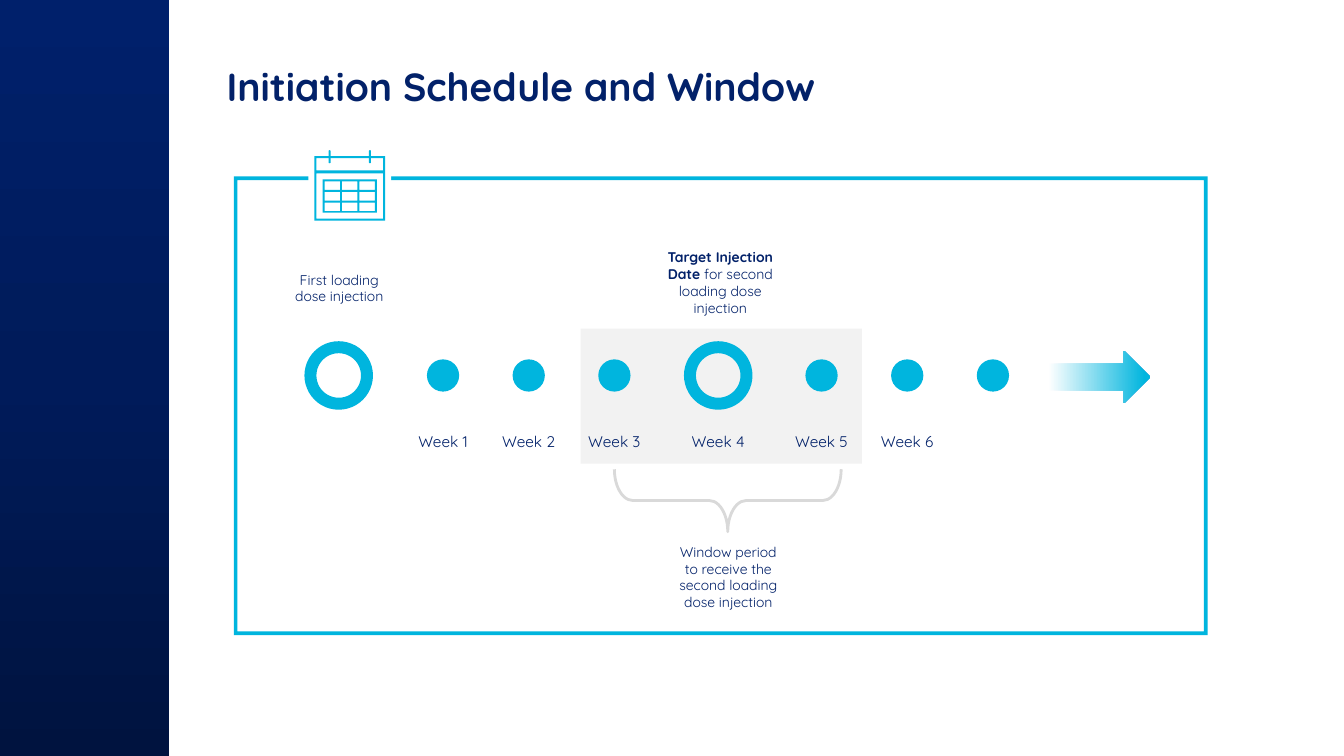
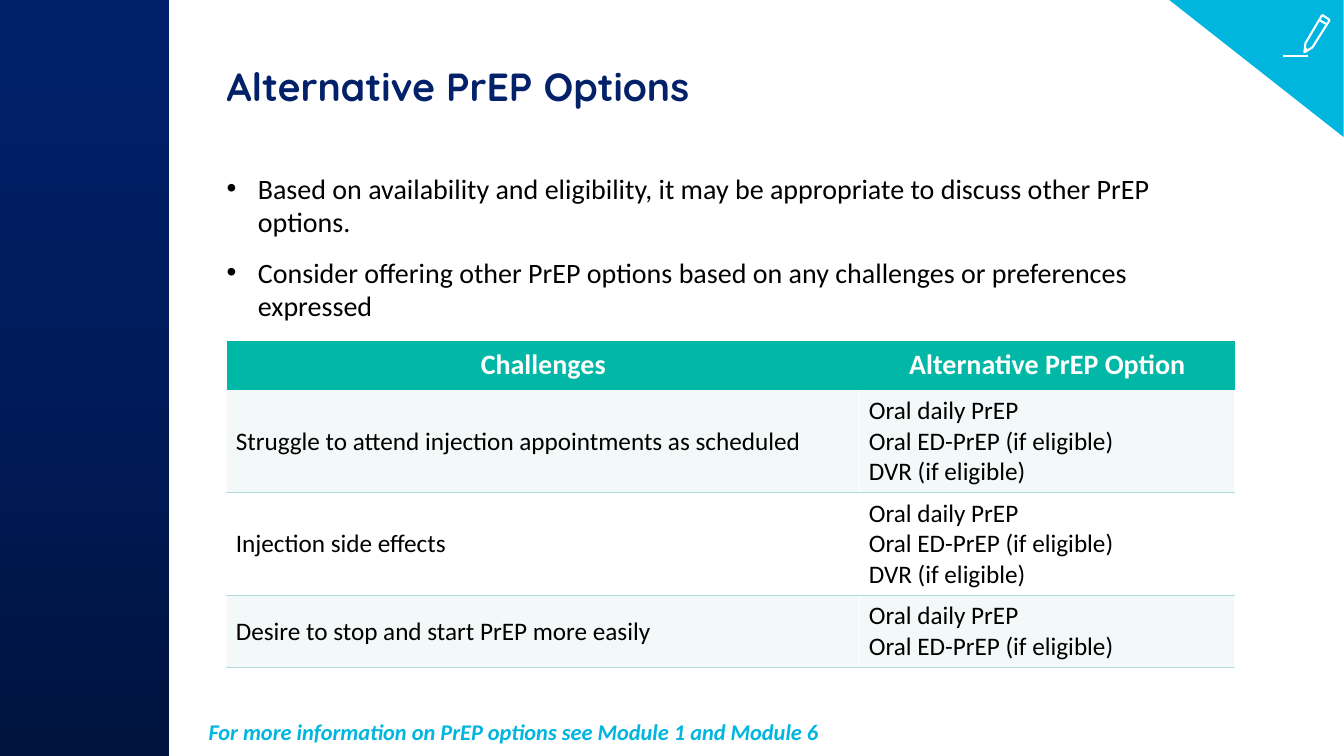
from copy import deepcopy
from itertools import product

from lxml.etree import SubElement
from pptx import Presentation
from pptx.dml.color import RGBColor
from pptx.enum.shapes import MSO_CONNECTOR as LINE, MSO_SHAPE as SHAPE
from pptx.enum.text import MSO_ANCHOR as ANCHOR, PP_ALIGN as ALIGN
from pptx.oxml.ns import qn
from pptx.util import Inches, Pt

CELL = Inches(0.1)
COLS, ROWS = 133.33, 75
COLORS = {
    "navy": "022169", "cyan": "00B5DE", "white": "FFFFFF", "black": "000000",
    "pale": "F2F2F2", "grey": "D9D9D9", "teal": "00B8A5", "mint": "F2F9F8",
    "rule": "B0DFDB", "band_dark": "00133F", "band_mid": "001B5A",
    "band_light": "00206B",
}
HEAD_FONT, BODY_FONT = "Quicksand", "Calibri"
PLAIN_TABLE = "{2D5ABB26-0587-4C30-8999-92F81FD0307C}"


def grid(*cells):
    return [round(CELL * n) for n in cells]


def rgb(name):
    return RGBColor.from_string(COLORS[name])


def style_runs(p, size, color, font=HEAD_FONT, bold=False, italic=False):
    for r in p.runs:
        r.font.size, r.font.name = Pt(size), font
        r.font.color.rgb = rgb(color)
        r.font.bold, r.font.italic = bold, italic


class Deck:
    def __init__(self):
        self.prs = Presentation()
        self.prs.slide_width, self.prs.slide_height = grid(COLS, ROWS)
        self.s = None

    def slide(self, title):
        self.s = self.prs.slides.add_slide(self.prs.slide_layouts[6])
        band = self.shape(SHAPE.RECTANGLE, 0, 0, 16.8, ROWS)
        self.gradient(band, [(0, "band_dark"), (0.5, "band_mid"), (1, "band_light")], 90)
        self.text(title, 21.5, 5.7, 100, 9.2, size=28, bold=True)

    def paint(self, sp, fill=None, line=None, weight=1):
        sp.shadow.inherit = False
        if fill:
            sp.fill.solid()
            sp.fill.fore_color.rgb = rgb(fill)
        else:
            sp.fill.background()
        if line:
            sp.line.color.rgb = rgb(line)
            sp.line.width = Pt(weight)
        else:
            sp.line.fill.background()
        return sp

    def shape(self, kind, x, y, w, h, fill=None, line=None, weight=1, adj=(), turn=0):
        sp = self.s.shapes.add_shape(kind, *grid(x, y, w, h))
        for i, value in enumerate(adj):
            sp.adjustments[i] = value
        sp.rotation = turn
        return self.paint(sp, fill, line, weight)

    def gradient(self, sp, stops, angle):
        sp.fill.gradient()
        sp.fill.gradient_angle = angle
        stop_list = next(sp._element.spPr.iter(qn("a:gsLst")))
        while len(stop_list) < len(stops):
            stop_list.append(deepcopy(stop_list[0]))
        for stop, (position, color) in zip(sp.fill.gradient_stops, stops):
            stop.position, stop.color.rgb = position, rgb(color)

    def outline(self, contours, **paint):
        builder = self.s.shapes.build_freeform(*grid(*contours[0][0]))
        for i, (start, *rest) in enumerate(contours):
            if i:
                builder.move_to(*grid(*start))
            builder.add_line_segments([grid(*point) for point in rest], close=True)
        return self.paint(builder.convert_to_shape(), **paint)

    def panes(self, *boxes):
        self.outline([[(x, y), (x + w, y), (x + w, y + h), (x, y + h)]
                      for x, y, w, h in boxes], fill="cyan")

    def line(self, x1, y1, x2, y2, color, weight):
        c = self.s.shapes.add_connector(LINE.STRAIGHT, *grid(x1, y1, x2, y2))
        c.line.color.rgb = rgb(color)
        c.line.width = Pt(weight)
        SubElement(c._element.spPr, qn("a:effectLst"))

    def text(self, text, x, y, w, h, size, color="navy", align=ALIGN.LEFT, lead="", **look):
        tf = self.s.shapes.add_textbox(*grid(x, y, w, h)).text_frame
        tf.word_wrap = True
        tf.text = lead or text
        p = tf.paragraphs[0]
        p.alignment = align
        if lead:
            p.add_run().text = text
        style_runs(p, size, color, **look)
        if lead:
            p.runs[0].font.bold = True
        return tf

    def bullets(self, items, x, y, w, h, size):
        tf = self.text("\n".join(items), x, y, w, h, size)
        for i, p in enumerate(tf.paragraphs):
            pPr = p._p.get_or_add_pPr()
            indent = grid(3.1)[0]
            pPr.set("marL", str(indent))
            pPr.set("indent", str(-indent))
            p.space_before = Pt(12 if i else 0)
            SubElement(pPr, qn("a:buFont"), typeface="Arial")
            SubElement(pPr, qn("a:buChar"), char="•")
            style_runs(p, size, "black", BODY_FONT)

    def border(self, cell, side, color, weight):
        ln = SubElement(cell._tc.get_or_add_tcPr(), qn(f"a:ln{side}"), w=str(Pt(weight)))
        SubElement(SubElement(ln, qn("a:solidFill")), qn("a:srgbClr"), val=COLORS[color])

    def table(self, rows, x, y, widths, heights):
        frame = self.s.shapes.add_table(len(rows), len(widths),
                                        *grid(x, y, sum(widths), sum(heights)))
        table = frame.table
        table.horz_banding = False
        next(table._tbl.tblPr.iter(qn("a:tableStyleId"))).text = PLAIN_TABLE
        for column, width in zip(table.columns, grid(*widths)):
            column.width = width
        for row, height in zip(table.rows, grid(*heights)):
            row.height = height
        for i, j in product(range(len(rows)), range(len(widths))):
            cell = table.cell(i, j)
            if i:
                for side, color, weight in (("L", "white", 1), ("R", "white", 1),
                                            ("B", "rule", 0.83)):
                    self.border(cell, side, color, weight)
            cell.fill.solid()
            cell.fill.fore_color.rgb = rgb("teal" if i == 0 else "mint" if i % 2 else "white")
            cell.vertical_anchor = ANCHOR.MIDDLE
            cell.margin_left, cell.margin_right = grid(0.9, 0.9)
            cell.margin_top, cell.margin_bottom = grid(0.5, 0.5)
            cell.text_frame.text = rows[i][j]
            for p in cell.text_frame.paragraphs:
                if i:
                    style_runs(p, 18, "black", BODY_FONT)
                else:
                    p.alignment = ALIGN.CENTER
                    style_runs(p, 20, "white", BODY_FONT, bold=True)


def calendar(deck):
    deck.shape(SHAPE.RECTANGLE, 30.6, 13.9, 8.2, 8.9, "white")
    deck.panes((31.2, 15.5, 7, 6.4), (31.4, 15.7, 6.6, 1.2), (31.4, 17.2, 6.6, 4.5))
    for x in (32.6, 36.6):
        deck.shape(SHAPE.ROUNDED_RECTANGLE, x, 14.9, 0.2, 1.3, "cyan", adj=[0.5])
    days = [(32.2 + 1.73 * i, 18 + 1.05 * j, 1.54, 0.85)
            for i, j in product(range(3), repeat=2)]
    deck.panes((32, 17.8, 5.4, 3.3), *days)


def schedule(deck):
    deck.slide("Initiation Schedule and Window")
    deck.shape(SHAPE.FRAME, 23.2, 17.5, 96.6, 45.5, "cyan", adj=[0.008])
    calendar(deck)
    deck.shape(SHAPE.RECTANGLE, 57.6, 32.6, 27.9, 13.4, "pale")

    axis, step, target = 37.25, 8.5, 71.25
    before = [43.95 + step * i for i in range(3)]
    after = [81.5 + step * i for i in range(3)]
    for x in before + after:
        deck.shape(SHAPE.OVAL, x - 1.6, axis - 1.6, 3.2, 3.2, "cyan")
    for x in (33.6, target):
        deck.shape(SHAPE.DONUT, x - 3.4, axis - 3.4, 6.8, 6.8, "cyan", adj=[0.175])
    for week, x in enumerate(before + [target] + after[:2], 1):
        deck.text(f"Week {week}", x - 3.9, 42.4, 7.8, 2.9, 11, align=ALIGN.CENTER)
    arrow = deck.shape(SHAPE.RIGHT_ARROW, 103.7, 34.8, 10.4, 5.2)
    deck.gradient(arrow, [(0.03, "white"), (0.95, "cyan")], 0)

    for lead, text, x, y, w, h in (
        ("", "First loading dose injection", 27.2, 26.4, 12.9, 4.4),
        ("Target Injection Date ", "for second loading dose injection", 65, 24.2, 12.9, 9.4),
        ("", "Window period to receive the second loading dose injection",
         65.9, 53.4, 12.7, 7.7),
    ):
        deck.text(text, x, y, w, h, 10, align=ALIGN.CENTER, lead=lead)
    deck.shape(SHAPE.LEFT_BRACE, 69.1, 38.4, 6.2, 22.5, line="grey", weight=2,
               adj=[0.294, 0.5], turn=270)


def pencil_corner(deck):
    deck.shape(SHAPE.RIGHT_TRIANGLE, 116, 0, 17.3, 13.6, "cyan", turn=180)
    deck.outline([[(130.2, 4.7), (129.4, 5.2), (129.5, 4.3), (131.1, 1.6),
                   (131.2, 1.5), (131.8, 1.9), (131.9, 2)]], line="white", weight=1.5)
    for ends in ((130.9, 2, 131.6, 2.4), (129.5, 4.8, 129.7, 5), (127.3, 5.6, 129.8, 5.6)):
        deck.line(*ends, "white", 1.5)


def options(deck):
    deck.slide("Alternative PrEP Options")
    deck.bullets([
        "Based on availability and eligibility, it may be appropriate to discuss other "
        "PrEP options.",
        "Consider offering other PrEP options based on any challenges or preferences "
        "expressed",
    ], 21.5, 16.5, 100, 17, 20)
    oral = "Oral daily PrEP\nOral ED-PrEP (if eligible)"
    all_options = oral + "\nDVR (if eligible)"
    deck.table([
        ("Challenges", "Alternative PrEP Option"),
        ("Struggle to attend injection appointments as scheduled", all_options),
        ("Injection side effects", all_options),
        ("Desire to stop and start PrEP more easily", oral),
    ], 22.5, 33.8, [62.8, 37.2], [4.9, 10.2, 10.2, 7.1])
    deck.text("For more information on PrEP options see Module 1 and Module 6",
              19.7, 70.8, 96.1, 3.7, 16, "cyan", font=BODY_FONT, bold=True, italic=True)
    pencil_corner(deck)


def main():
    deck = Deck()
    schedule(deck)
    options(deck)
    deck.prs.save("out.pptx")


if __name__ == "__main__":
    main()
